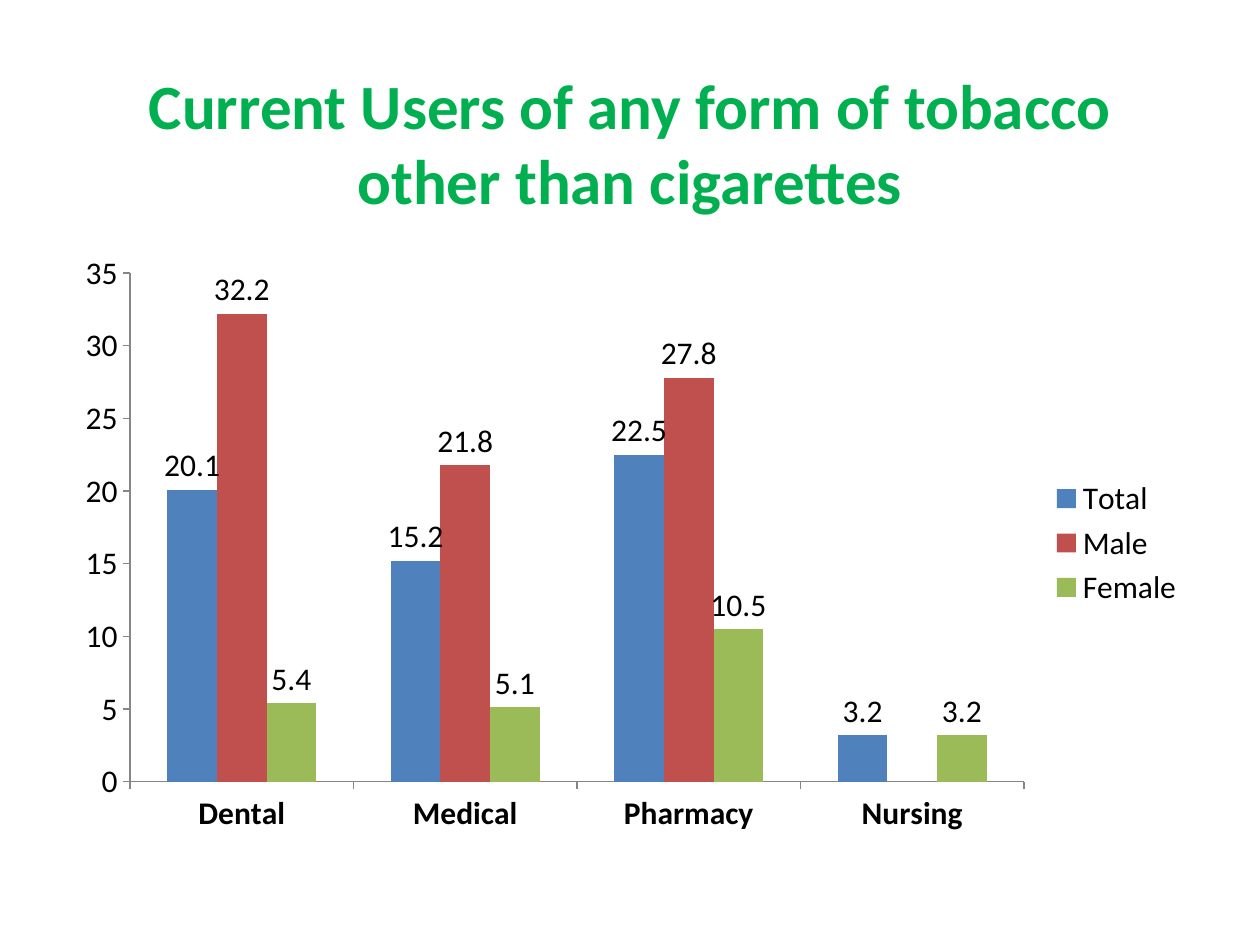
import pptx
import pptx.chart.data
import pptx.dml.color
import pptx.enum.chart
import pptx.enum.text
import pptx.util

RGB = pptx.dml.color.RGBColor
GREEN = RGB(0x00, 0xB0, 0x50)
BLACK = RGB(0x00, 0x00, 0x00)
GREY = RGB(0x86, 0x86, 0x86)
BLUE = RGB(0x4F, 0x81, 0xBD)
RED = RGB(0xC0, 0x50, 0x4D)
LIME = RGB(0x9B, 0xBB, 0x59)

SCALE = 914400 // 100  # EMU per px, 100 px to the inch

GROUPS = ["Dental", "Medical", "Pharmacy", "Nursing"]
USERS = [
    ("Total", BLUE, (20.1, 15.2, 22.5, 3.2)),
    ("Male", RED, (32.2, 21.8, 27.8, None)),
    ("Female", LIME, (5.4, 5.1, 10.5, 3.2)),
]


def apply(item, values):
    for name, value in values.items():
        setattr(item, name, value)


class Painter:
    face = "Calibri"

    def __init__(self, slide):
        self.slide = slide

    def box(self, *px):
        return [pptx.util.Emu(n * SCALE) for n in px]

    def font(self, font, size, color, bold=False):
        apply(font, {"name": self.face, "size": pptx.util.Pt(size), "bold": bold})
        font.color.rgb = color

    def title(self, text, px, size, color):
        frame = self.slide.shapes.add_textbox(*self.box(*px)).text_frame
        apply(frame, {
            "word_wrap": True,
            "vertical_anchor": pptx.enum.text.MSO_ANCHOR.MIDDLE,
        })
        line = frame.paragraphs[0]
        line.alignment = pptx.enum.text.PP_ALIGN.CENTER
        run = line.add_run()
        run.text = text
        self.font(run.font, size, color, True)

    def axis(self, axis, size, bold=False):
        apply(axis, {
            "has_major_gridlines": False,
            "major_tick_mark": pptx.enum.chart.XL_TICK_MARK.OUTSIDE,
            "minor_tick_mark": pptx.enum.chart.XL_TICK_MARK.NONE,
        })
        self.font(axis.tick_labels.font, size, BLACK, bold)
        axis.format.line.color.rgb = GREY
        axis.format.line.width = pptx.util.Pt(0.75)

    def columns(self, groups, rows, px, size):
        data = pptx.chart.data.CategoryChartData(number_format="General")
        data.categories = groups
        for name, _, values in rows:
            data.add_series(name, values)
        kind = pptx.enum.chart.XL_CHART_TYPE.COLUMN_CLUSTERED
        chart = self.slide.shapes.add_chart(kind, *self.box(*px), data).chart
        apply(chart, {"has_title": False, "has_legend": True})
        self.font(chart.font, size, BLACK)

        # Legend and axes
        apply(chart.legend, {
            "position": pptx.enum.chart.XL_LEGEND_POSITION.RIGHT,
            "include_in_layout": False,
        })
        self.font(chart.legend.font, size, BLACK)
        self.axis(chart.category_axis, size, True)
        self.axis(chart.value_axis, size)
        apply(chart.value_axis, {
            "minimum_scale": 0, "maximum_scale": 35, "major_unit": 5,
        })

        # Bars and their values
        plot = chart.plots[0]
        apply(plot, {"gap_width": 150, "overlap": 0, "vary_by_categories": False})
        for bars, (_, color, _) in zip(plot.series, rows):
            bars.format.fill.solid()
            bars.format.fill.fore_color.rgb = color
            bars.invert_if_negative = False
            apply(bars.data_labels, {
                "show_value": True,
                "position": pptx.enum.chart.XL_LABEL_POSITION.OUTSIDE_END,
            })
            self.font(bars.data_labels.font, size, BLACK)


def main():
    deck = pptx.Presentation()
    apply(deck, {
        "slide_width": pptx.util.Inches(10),
        "slide_height": pptx.util.Inches(7.5),
    })
    paint = Painter(deck.slides.add_slide(deck.slide_layouts[6]))

    # Heading
    paint.title("Current Users of any form of tobacco other than cigarettes",
                (50, 50, 900, 125), 36, GREEN)

    # Tobacco use by field of study
    paint.columns(GROUPS, USERS, (50, 192, 900, 478), 18)

    deck.save("out.pptx")


if __name__ == "__main__":
    main()
